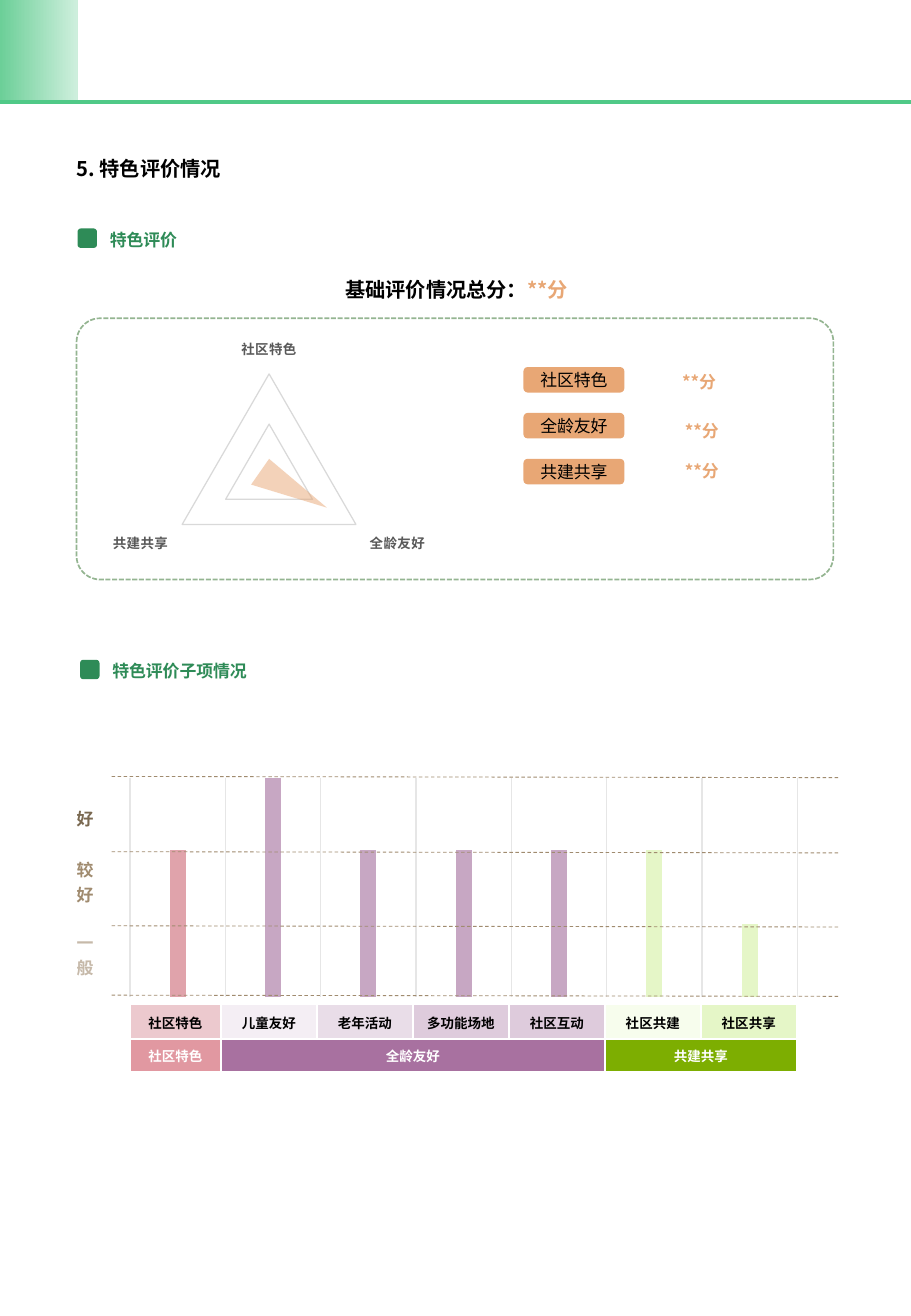
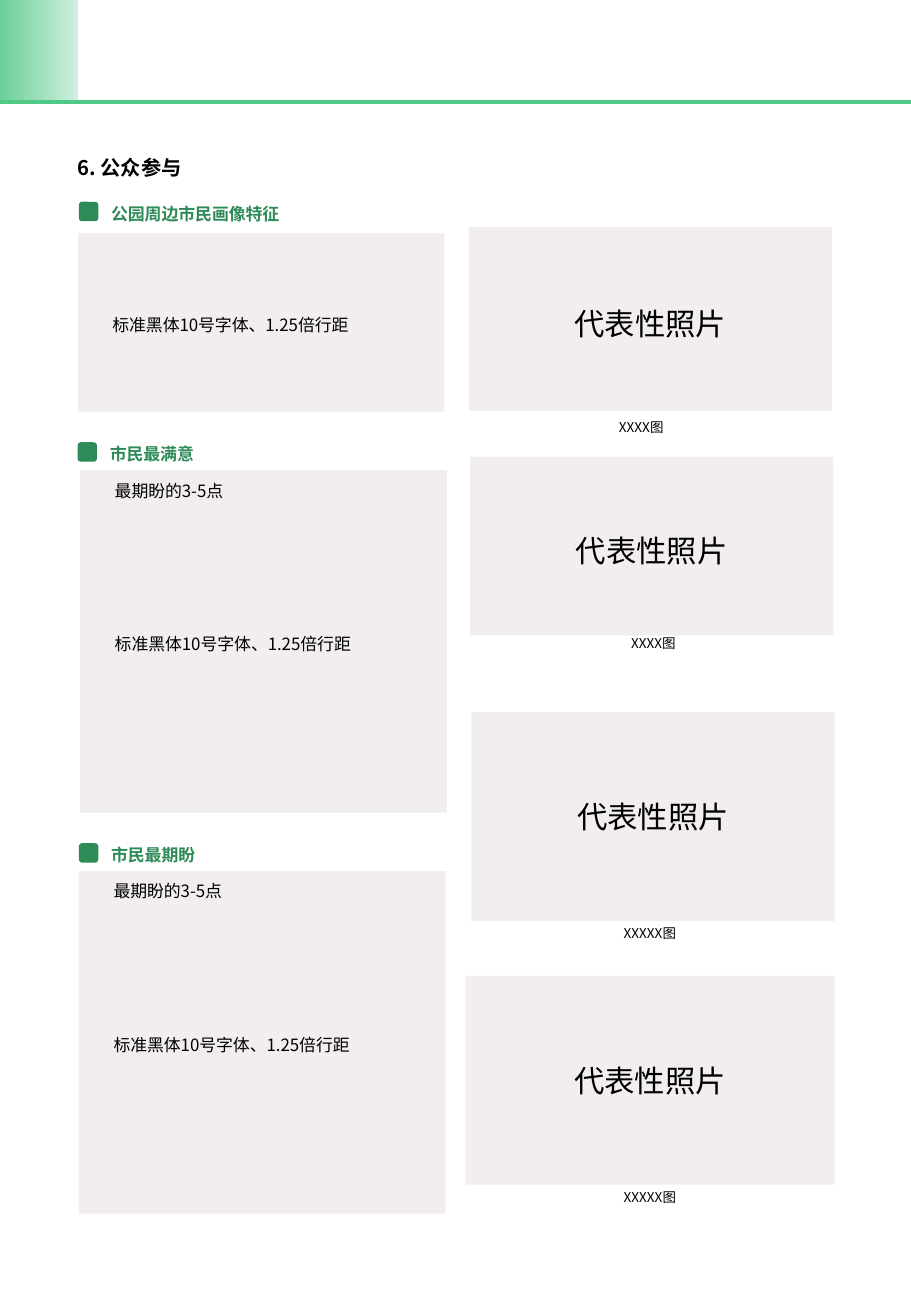
from dataclasses import dataclass

from lxml import etree
from pptx import Presentation
from pptx.chart.data import CategoryChartData
from pptx.dml.color import RGBColor
from pptx.enum import chart as charts, dml, shapes, text
from pptx.oxml import ns
from pptx.util import Pt


@dataclass(frozen=True)
class Theme:
    font: str = "Noto Sans CJK SC"
    chart_font: str = "Arial"
    black: str = "000000"
    white: str = "FFFFFF"
    green: str = "2E8B57"
    rule: str = "50C987"
    band: tuple = ("6CCF98", "CEEFDD")
    frame: str = "94B591"
    orange: str = "E8A775"
    panel: str = "F2EEEE"
    brown: str = "A08B6F"
    gray: str = "595959"
    light_grid: str = "E6E6E6"
    radar_grid: str = "D9D9D9"
    title: float = 12
    body: float = 10
    small: float = 8
    photo: float = 18
    indent: float = 20.5


THEME = Theme()
ALIGN = text.PP_ALIGN
SHAPE = shapes.MSO_SHAPE
NO_INSET = (0, 0, 0, 0)


def rgb(code):
    return RGBColor.from_string(code)


def points(*values):
    return [Pt(value) for value in values]


def add_east_asian(root):
    """Repeat each Latin typeface as the East Asian one."""
    for latin in list(root.iter(ns.qn("a:latin"))):
        latin.addnext(etree.Element(ns.qn("a:ea"), typeface=latin.get("typeface")))


def write(frame, spans, size=THEME.body, color=THEME.black, bold=False,
          align=ALIGN.CENTER, spacing=None, indent=0, inset=None,
          anchor=text.MSO_ANCHOR.MIDDLE):
    """Fill a text frame with one paragraph; spans is a string or (text, colour) pairs."""
    frame.word_wrap = True
    frame.vertical_anchor = anchor
    if inset is not None:
        (frame.margin_left, frame.margin_top,
         frame.margin_right, frame.margin_bottom) = points(*inset)
    para = frame.paragraphs[0]
    para.alignment = align
    if spacing:
        para.line_spacing = spacing
    if indent:
        para._p.get_or_add_pPr().set("indent", str(Pt(indent)))
    font = para.font
    font.name, font.size, font.bold = THEME.font, Pt(size), bold
    if isinstance(spans, str):
        font.color.rgb = rgb(color)
        para.add_run().text = spans
    else:
        for words, span_color in spans:
            span = para.add_run()
            span.text = words
            span.font.color.rgb = rgb(span_color)
    add_east_asian(para._p)


def add_label(parent, box, spans, **style):
    label = parent.shapes.add_textbox(*points(*box))
    write(label.text_frame, spans, **style)


def add_block(parent, kind, box, fill=None):
    block = parent.shapes.add_shape(kind, *points(*box))
    block.shadow.inherit = False
    block.line.fill.background()
    if fill:
        block.fill.solid()
        block.fill.fore_color.rgb = rgb(fill)
    else:
        block.fill.background()
    return block


def add_line(parent, start, end, color, width, dash=None):
    line = parent.shapes.add_connector(shapes.MSO_CONNECTOR.STRAIGHT,
                                       *points(*start, *end))
    line.line.color.rgb = rgb(color)
    line.line.width = Pt(width)
    if dash:
        line.line.dash_style = dash
    etree.SubElement(line.element.spPr, ns.qn("a:effectLst"))
    return line


def add_header_to_layout(page, layout):
    """Draw the green band and rule, then hand them to the shared layout."""
    for holder in list(layout.placeholders):
        if holder.placeholder_format.idx != 0:
            holder.element.getparent().remove(holder.element)
    band = add_block(page, SHAPE.RECTANGLE, (0, 0, 46, 60.5))
    band.fill.gradient()
    band.fill.gradient_angle = 0
    for stop, color in zip(band.fill.gradient_stops, THEME.band):
        stop.color.rgb = rgb(color)
    rule = add_line(page, (0, 60.5), (540, 60.5), THEME.rule, 2.5)
    for part in (band, rule):
        layout.shapes.element.append(part.element)


def set_title(page, box, words):
    title = page.shapes.title
    title.left, title.top, title.width, title.height = points(*box)
    title.text_frame.auto_size = text.MSO_AUTO_SIZE.NONE
    write(title.text_frame, words, THEME.title, bold=True, align=ALIGN.LEFT,
          spacing=1.25, inset=NO_INSET)


def add_heading(page, left, top, words, width=234):
    """A green square followed by a section heading."""
    group = page.shapes.add_group_shape()
    add_label(group, (left - 8.5, top, width, 21), words, color=THEME.green,
              bold=True, align=ALIGN.JUSTIFY, spacing=1.25, indent=THEME.indent,
              anchor=text.MSO_ANCHOR.TOP)
    add_block(group, SHAPE.ROUNDED_RECTANGLE, (left, top + 5.8, 11.5, 11.5),
              THEME.green)


def add_chart(page, kind, box, names, values, font, size, color, bold=False):
    data = CategoryChartData()
    data.categories = names
    data.add_series("Series 1", values)
    chart = page.shapes.add_chart(kind, *points(*box), data).chart
    chart.has_title = chart.has_legend = False
    chart.font.name, chart.font.size, chart.font.bold = font, Pt(size), bold
    chart.font.color.rgb = rgb(color)
    chart.value_axis.visible = False
    return chart


def style_line(line, color, width=0.75):
    line.color.rgb = rgb(color)
    line.width = Pt(width)


def set_plot_area(chart, x, y, w, h):
    """Fix the inner plot area as fractions of the chart."""
    area = next(chart.element.iter(ns.qn("c:plotArea")))
    for old in area.findall(ns.qn("c:layout")):
        area.remove(old)
    layout = etree.Element(ns.qn("c:layout"))
    manual = etree.SubElement(layout, ns.qn("c:manualLayout"))
    for tag, value in (("layoutTarget", "inner"), ("xMode", "edge"),
                       ("yMode", "edge"), ("x", x), ("y", y), ("w", w), ("h", h)):
        etree.SubElement(manual, ns.qn(f"c:{tag}"), val=str(value))
    area.insert(0, layout)


def add_radar(page):
    chart = add_chart(page, charts.XL_CHART_TYPE.RADAR_FILLED, (41.8, 197.3, 235.4, 146.2),
                      ("社区特色", "全龄友好", "共建共享"), (23, 100, 31),
                      THEME.font, THEME.small, THEME.gray, bold=True)
    add_east_asian(chart.element)
    value, category = chart.value_axis, chart.category_axis
    value.minimum_scale, value.maximum_scale, value.major_unit = 0, 150, 75
    value.has_major_gridlines = True
    style_line(value.major_gridlines.format.line, THEME.radar_grid)
    category.has_major_gridlines = False
    category.major_tick_mark = charts.XL_TICK_MARK.NONE
    style_line(category.format.line, THEME.radar_grid)
    chart.plots[0].vary_by_categories = False
    area = chart.plots[0].series[0].format
    area.fill.solid()
    area.fill.fore_color.rgb = rgb(THEME.orange)
    area.line.fill.background()
    for color in chart.plots[0].series[0].format.fill._xPr.iter(ns.qn("a:srgbClr")):
        etree.SubElement(color, ns.qn("a:alpha"), val="50000")


def add_columns(page):
    chart = add_chart(page, charts.XL_CHART_TYPE.COLUMN_CLUSTERED, (56.2, 455.8, 416.9, 168.5),
                      [str(n) for n in range(1, 8)], (67, 100, 67, 67, 67, 67, 33),
                      THEME.chart_font, THEME.body, THEME.black)
    set_plot_area(chart, 0.05, 0.03, 0.95, 0.77)
    value, category = chart.value_axis, chart.category_axis
    value.minimum_scale, value.maximum_scale = 0, 100
    value.has_major_gridlines = False
    category.visible = False
    category.has_major_gridlines = True
    style_line(category.major_gridlines.format.line, THEME.light_grid)
    plot = chart.plots[0]
    plot.gap_width, plot.overlap, plot.vary_by_categories = 500, 2, False
    colors = ["E0A3AB"] + ["C7A7C3"] * 4 + ["E5F6C7"] * 2
    for index, color in enumerate(colors):
        fill = plot.series[0].points[index].format.fill
        fill.solid()
        fill.fore_color.rgb = rgb(color)


def set_cell(cell, words, fill, color):
    cell.fill.solid()
    cell.fill.fore_color.rgb = rgb(fill)
    cell.margin_left = cell.margin_right = Pt(8)
    cell.margin_top, cell.margin_bottom = Pt(0.7), 0
    cell.vertical_anchor = text.MSO_ANCHOR.MIDDLE
    write(cell.text_frame, words, THEME.small, color, bold=True)


def add_borders(cell):
    props = cell._tc.get_or_add_tcPr()
    for place, side in enumerate("LRTB"):
        edge = etree.Element(ns.qn(f"a:ln{side}"), w=str(Pt(1)))
        solid = etree.SubElement(edge, ns.qn("a:solidFill"))
        etree.SubElement(solid, ns.qn("a:srgbClr"), val=THEME.white)
        props.insert(place, edge)


def add_item_table(page):
    items = (("社区特色", "ECC9CE"), ("儿童友好", "F4EEF4"), ("老年活动", "E9DDE8"),
             ("多功能场地", "DECBDC"), ("社区互动", "DECBDC"), ("社区共建", "F7FDED"),
             ("社区共享", "E5F6C7"))
    themes = ((0, 0, "社区特色", "E198A1"), (1, 4, "全龄友好", "A871A0"),
              (5, 6, "共建共享", "7DAE01"))
    table = page.shapes.add_table(2, 7, *points(77, 595.4, 395.4, 39.6)).table
    table.first_row = table.horz_banding = False
    for index, column in enumerate(table.columns):
        column.width = Pt(56.9 if index else 54)
    for row, height in zip(table.rows, (20.2, 19.4)):
        row.height = Pt(height)
    for index, (words, fill) in enumerate(items):
        set_cell(table.cell(0, index), words, fill, THEME.black)
    for first, last, words, fill in themes:
        if last > first:
            table.cell(1, first).merge(table.cell(1, last))
        set_cell(table.cell(1, first), words, fill, THEME.white)
    for cell in table.iter_cells():
        add_borders(cell)


def build_feature_page(page):
    set_title(page, (45.4, 92.9, 204.5, 10), "5. 特色评价情况")
    add_columns(page)
    add_radar(page)
    add_heading(page, 46, 129.6, "特色评价", 127.4)
    add_heading(page, 47.5, 385.2, "特色评价子项情况", 127.4)
    add_item_table(page)
    add_label(page, (172.8, 160.6, 195.8, 22.3),
              (("基础评价情况总分：", THEME.black), ("**分", THEME.orange)),
              size=THEME.title, bold=True)
    scores = (("社区特色", 378.4, 216.7), ("全龄友好", 380, 245.5), ("共建共享", 380, 269.3))
    for index, (words, left, top) in enumerate(scores):
        button = add_block(page, SHAPE.ROUNDED_RECTANGLE,
                           (310.3, 217.5 + 27.2 * index, 59.8, 15.1), THEME.orange)
        write(button.text_frame, words)
        add_label(page, (left, top, 72, 19.4), "**分", color=THEME.orange,
                  bold=True, anchor=text.MSO_ANCHOR.TOP)
    frame = add_block(page, SHAPE.ROUNDED_RECTANGLE, (45.4, 188.6, 448.6, 154.8))
    frame.adjustments[0] = 0.09
    style_line(frame.line, THEME.frame, 1)
    frame.line.dash_style = dml.MSO_LINE.SQUARE_DOT
    for words, top, height, color in (("好", 475.9, 13.7, "7A6951"),
                                      ("较好", 506.2, 28.8, THEME.brown),
                                      ("一般", 549.4, 28.8, "C6B9A9")):
        add_label(page, (45.4, top, 11.5, height), words, color=color, bold=True,
                  align=ALIGN.JUSTIFY, spacing=1.25, inset=NO_INSET,
                  anchor=text.MSO_ANCHOR.TOP)
    for top in (460.1, 504.7, 548.6, 589.7):
        add_line(page, (66.2, top), (498.2, top + 0.7), THEME.brown, 0.5,
                 dml.MSO_LINE.DASH)


def build_public_page(page):
    set_title(page, (46, 90, 204.5, 14.4), "6. 公众参与")
    note = dict(align=ALIGN.JUSTIFY, spacing=1.25, indent=THEME.indent, inset=NO_INSET)
    sections = (("公园周边市民画像特征", 46.8, 113.8, (46.1, 138.2, 217.4, 105.8), False),
                ("市民最满意", 46, 256.3, (47.5, 278.6, 217.4, 203), True),
                ("市民最期盼", 46.8, 493.9, (46.8, 516.2, 217.4, 203), True))
    for words, left, top, box, has_hint in sections:
        add_heading(page, left, top, words)
        panel = add_block(page, SHAPE.RECTANGLE, box, THEME.panel)
        write(panel.text_frame, "标准黑体10号字体、1.25倍行距", **note)
        if has_hint:
            add_label(page, (box[0], box[1] + 2.9, box[2], 13.7), "最期盼的3-5点",
                      anchor=text.MSO_ANCHOR.TOP, **note)
    photos = (((277.9, 134.6, 215.3, 108.7), 1.25, "XXXX图", 270.7, 246.2),
              ((278.6, 270.7, 215.3, 105.8), 1.25, "XXXX图", 277.9, 373.7),
              ((279.4, 421.9, 215.3, 123.8), 1, "XXXXX图", 275.8, 545.8),
              ((275.8, 578.2, 218.9, 123.8), 1, "XXXXX图", 275.8, 702))
    for box, spacing, caption, left, top in photos:
        photo = add_block(page, SHAPE.RECTANGLE, box, THEME.panel)
        write(photo.text_frame, "代表性照片", THEME.photo, spacing=spacing, inset=NO_INSET)
        add_label(page, (left, top, 218.9, 10.8), caption, size=THEME.small,
                  spacing=1.25, inset=NO_INSET, anchor=text.MSO_ANCHOR.TOP)


def main():
    deck = Presentation()
    deck.slide_width, deck.slide_height = points(540, 779.8)
    layout = deck.slide_layouts[5]
    pages = [deck.slides.add_slide(layout) for _ in range(2)]
    add_header_to_layout(pages[0], layout)
    build_feature_page(pages[0])
    build_public_page(pages[1])
    deck.save("out.pptx")


if __name__ == "__main__":
    main()
